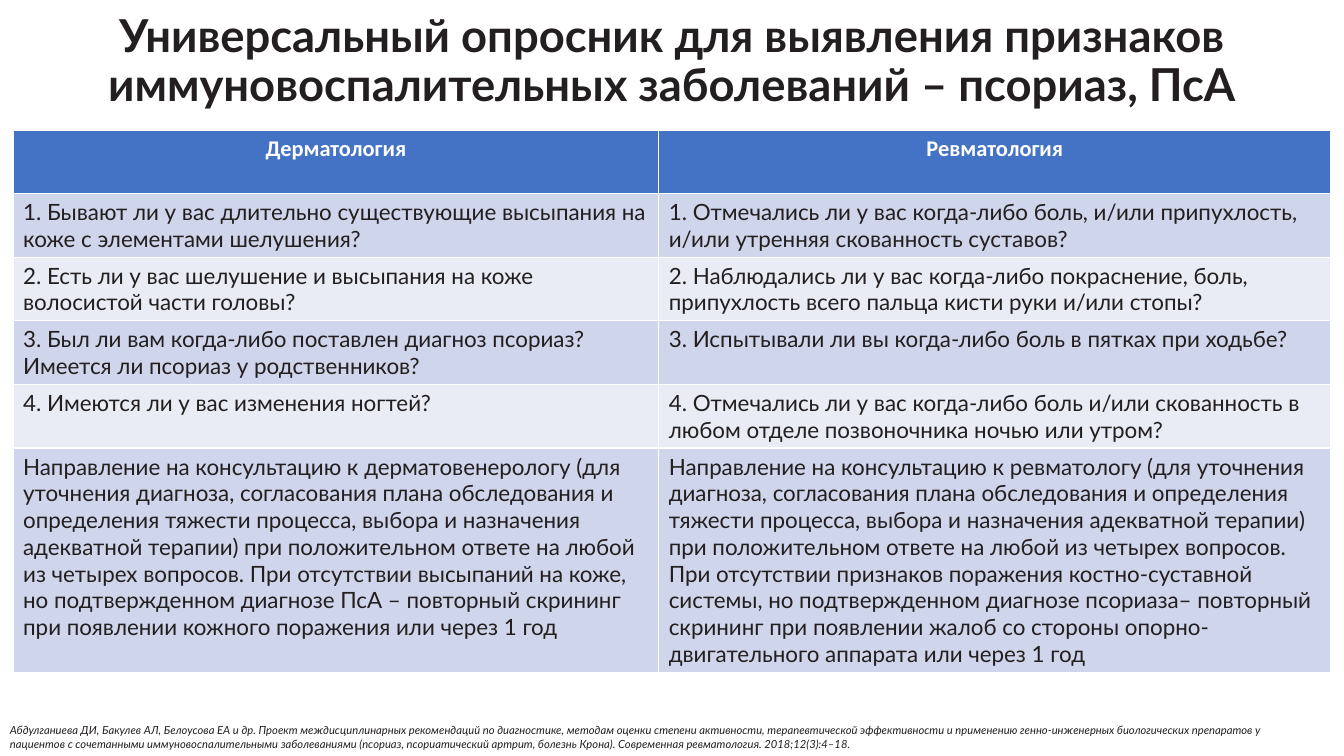
from pptx import Presentation
from pptx.dml.color import RGBColor
from pptx.enum.text import MSO_ANCHOR, MSO_AUTO_SIZE, PP_ALIGN
from pptx.util import Inches, Pt

TITLE = "Универсальный опросник для выявления признаков иммуновоспалительных заболеваний – псориаз, ПсА"
ROWS = [
    ("Дерматология", "Ревматология"),
    ("1. Бывают ли у вас длительно существующие высыпания на коже с элементами шелушения?",
     "1. Отмечались ли у вас когда-либо боль, и/или припухлость, и/или утренняя скованность суставов?"),
    ("2. Есть ли у вас шелушение и высыпания на коже волосистой части головы?",
     "2. Наблюдались ли у вас когда-либо покраснение, боль, припухлость всего пальца кисти руки и/или стопы?"),
    ("3. Был ли вам когда-либо поставлен диагноз псориаз? Имеется ли псориаз у родственников?",
     "3. Испытывали ли вы когда-либо боль в пятках при ходьбе?"),
    ("4. Имеются ли у вас изменения ногтей?",
     "4. Отмечались ли у вас когда-либо боль и/или скованность в любом отделе позвоночника ночью или утром?"),
    ("Направление на консультацию к дерматовенерологу (для уточнения диагноза, согласования плана "
     "обследования и определения тяжести процесса, выбора и назначения адекватной терапии) при "
     "положительном ответе на любой из четырех вопросов. При отсутствии высыпаний на коже, но "
     "подтвержденном диагнозе ПсА – повторный скрининг при появлении кожного поражения или через 1 год",
     "Направление на консультацию к ревматологу (для уточнения диагноза, согласования плана "
     "обследования и определения тяжести процесса, выбора и назначения адекватной терапии) при "
     "положительном ответе на любой из четырех вопросов.\n"
     "При отсутствии признаков поражения костно-суставной системы, но подтвержденном диагнозе "
     "псориаза– повторный скрининг при появлении жалоб со стороны опорно-двигательного аппарата "
     "или через 1 год"),
]
SOURCE = ("Абдулганиева ДИ, Бакулев АЛ, Белоусова ЕА и др. Проект междисциплинарных рекомендаций по "
          "диагностике, методам оценки степени активности, терапевтической эффективности и применению "
          "генно-инженерных биологических препаратов у пациентов с сочетанными иммуновоспалительными "
          "заболеваниями (псориаз, псориатический артрит, болезнь Крона). Современная ревматология. "
          "2018;12(3):4–18.")

INK = RGBColor(0x23, 0x1F, 0x20)
WHITE = RGBColor(0xFF, 0xFF, 0xFF)
BLUE = RGBColor(0x44, 0x72, 0xC4)
BANDS = [RGBColor(0xE9, 0xEB, 0xF5), RGBColor(0xCF, 0xD5, 0xEA)]

WIDE, HIGH = 13.33, 7.5
EDGE = 0.13
SPAN = WIDE - 2 * EDGE
COLS = [0.49 * SPAN, 0.51 * SPAN]
STEP, LAST = 0.63, 2.23


def write(frame, text, size, color=INK, font="Lato", bold=False, italic=False, align=PP_ALIGN.LEFT):
    frame.word_wrap = True
    for i, line in enumerate(text.split("\n")):
        para = frame.add_paragraph() if i else frame.paragraphs[0]
        para.alignment = align
        run = para.add_run()
        run.text = line
        run.font.name, run.font.size = font, Pt(size)
        run.font.bold, run.font.italic = bold, italic
        run.font.color.rgb = color


def place(shape, left, top, width, height):
    shape.left, shape.top = Inches(left), Inches(top)
    shape.width, shape.height = Inches(width), Inches(height)


def main():
    deck = Presentation()
    deck.slide_width, deck.slide_height = Inches(WIDE), Inches(HIGH)
    slide = deck.slides.add_slide(deck.slide_layouts[5])

    title = slide.shapes.title
    place(title, EDGE, 0.15, SPAN, 0.94)
    frame = title.text_frame
    frame.auto_size = MSO_AUTO_SIZE.NONE
    frame.vertical_anchor = MSO_ANCHOR.MIDDLE
    write(frame, TITLE, 32.4, bold=True, align=PP_ALIGN.CENTER)
    frame.paragraphs[0].line_spacing = 0.9

    high = STEP * (len(ROWS) - 1) + LAST
    table = slide.shapes.add_table(len(ROWS), len(COLS), Inches(EDGE), Inches(1.29),
                                   Inches(SPAN), Inches(high)).table
    for col, width in zip(table.columns, COLS):
        col.width = Inches(width)
    for r, texts in enumerate(ROWS):
        table.rows[r].height = Inches(LAST if r == len(ROWS) - 1 else STEP)
        for c, text in enumerate(texts):
            cell = table.cell(r, c)
            cell.fill.solid()
            cell.fill.fore_color.rgb = BANDS[r % 2] if r else BLUE
            if r:
                write(cell.text_frame, text, 16)
            else:
                write(cell.text_frame, text, 16, WHITE, "Calibri", bold=True, align=PP_ALIGN.CENTER)

    note = slide.shapes.add_textbox(0, 0, 0, 0)
    place(note, 0, 7.13, WIDE - EDGE, 0.37)
    write(note.text_frame, SOURCE, 8, italic=True)

    deck.save("out.pptx")


if __name__ == "__main__":
    main()
